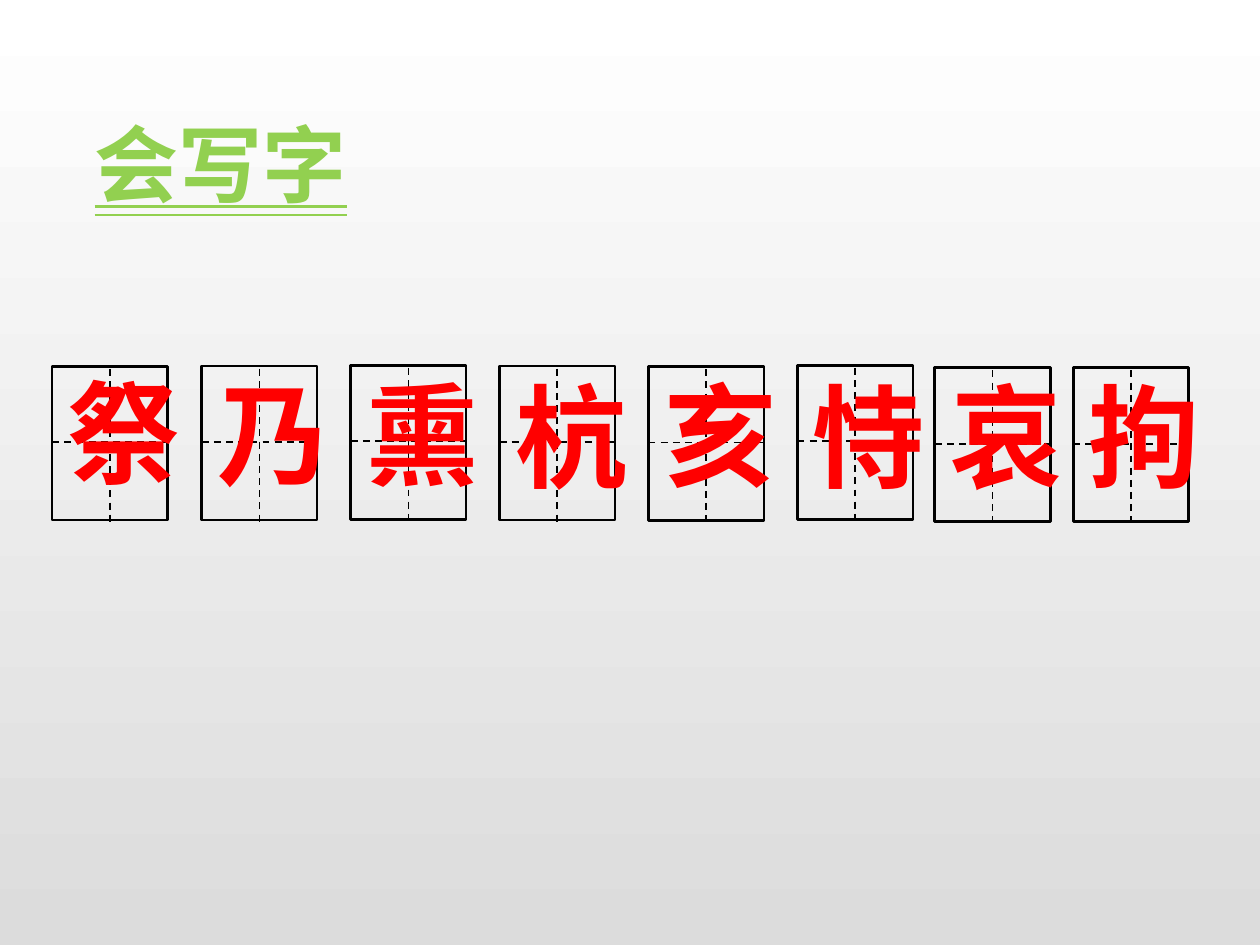
from lxml.etree import SubElement
from pptx import Presentation
from pptx.dml.color import RGBColor
from pptx.enum.dml import MSO_LINE
from pptx.enum.shapes import MSO_CONNECTOR, MSO_SHAPE
from pptx.enum.text import MSO_ANCHOR, MSO_AUTO_SIZE, MSO_UNDERLINE, PP_ALIGN
from pptx.oxml.ns import qn
from pptx.util import Pt

BLACK = RGBColor(0x00, 0x00, 0x00)
RED = RGBColor(0xFF, 0x00, 0x00)
GREEN = RGBColor(0x92, 0xD0, 0x50)
WHITE = RGBColor(0xFF, 0xFF, 0xFF)
GRAY = RGBColor(0xDC, 0xDC, 0xDC)
FONT = "Noto Sans CJK SC"
CELL_WIDTH, CELL_HEIGHT = 66, 88
CELLS = [
    ("祭", 29.8, 209.3, 203.8),
    ("乃", 115.3, 209.2, 204.5),
    ("熏", 200.4, 208.8, 204.5),
    ("杭", 285.5, 209.2, 205.9),
    ("亥", 370.6, 209.5, 205.2),
    ("恃", 455.7, 208.8, 205.9),
    ("哀", 534.2, 210.2, 205.9),
    ("拘", 613.3, 210.2, 205.9),
]


def write(box, text, size, color, wrap):
    frame = box.text_frame
    frame.auto_size = MSO_AUTO_SIZE.NONE
    frame.word_wrap = wrap
    frame.vertical_anchor = MSO_ANCHOR.MIDDLE
    para = frame.paragraphs[0]
    para.text = text
    para.alignment = PP_ALIGN.LEFT
    para.line_spacing = 1.0
    para.font.size = Pt(size)
    para.font.bold = True
    para.font.color.rgb = color
    para.font.name = FONT
    defaults = para._p.pPr.find(qn("a:defRPr"))
    SubElement(defaults, qn("a:ea")).set("typeface", FONT)
    return para


def add_guide(group, x1, y1, x2, y2):
    guide = group.shapes.add_connector(MSO_CONNECTOR.STRAIGHT, Pt(x1), Pt(y1), Pt(x2), Pt(y2))
    guide.line.color.rgb = BLACK
    guide.line.width = Pt(1)
    guide.line.dash_style = MSO_LINE.DASH
    SubElement(guide._element.spPr, qn("a:effectLst"))


deck = Presentation()
deck.slide_width, deck.slide_height = Pt(720), Pt(540)
slide = deck.slides.add_slide(deck.slide_layouts[5])

backdrop = slide.background.fill
backdrop.gradient()
backdrop.gradient_angle = 270
for stop, color, position in zip(backdrop.gradient_stops, (WHITE, GRAY), (0, 1)):
    stop.color.rgb = color
    stop.position = position

title = slide.shapes.title
title.left, title.top, title.width, title.height = Pt(46.8), Pt(60.5), Pt(160.6), Pt(65.5)
heading = write(title, "会写字", 48, GREEN, False)
heading.font.underline = MSO_UNDERLINE.DOUBLE_LINE

for character, left, top, text_top in CELLS:
    cell = slide.shapes.add_group_shape()
    frame = cell.shapes.add_shape(
        MSO_SHAPE.RECTANGLE, Pt(left), Pt(top), Pt(CELL_WIDTH), Pt(CELL_HEIGHT)
    )
    frame.shadow.inherit = False
    frame.fill.background()
    frame.line.color.rgb = BLACK
    frame.line.width = Pt(1.5)
    across, down = top + 43.4, left + CELL_WIDTH / 2
    add_guide(cell, left, across, left + CELL_WIDTH, across)
    add_guide(cell, down, top + 1.5, down, top + 1.5 + CELL_HEIGHT)

    box = slide.shapes.add_textbox(Pt(left + 1.8), Pt(text_top), Pt(64), Pt(85))
    write(box, character, 64, RED, True)

deck.save("out.pptx")
